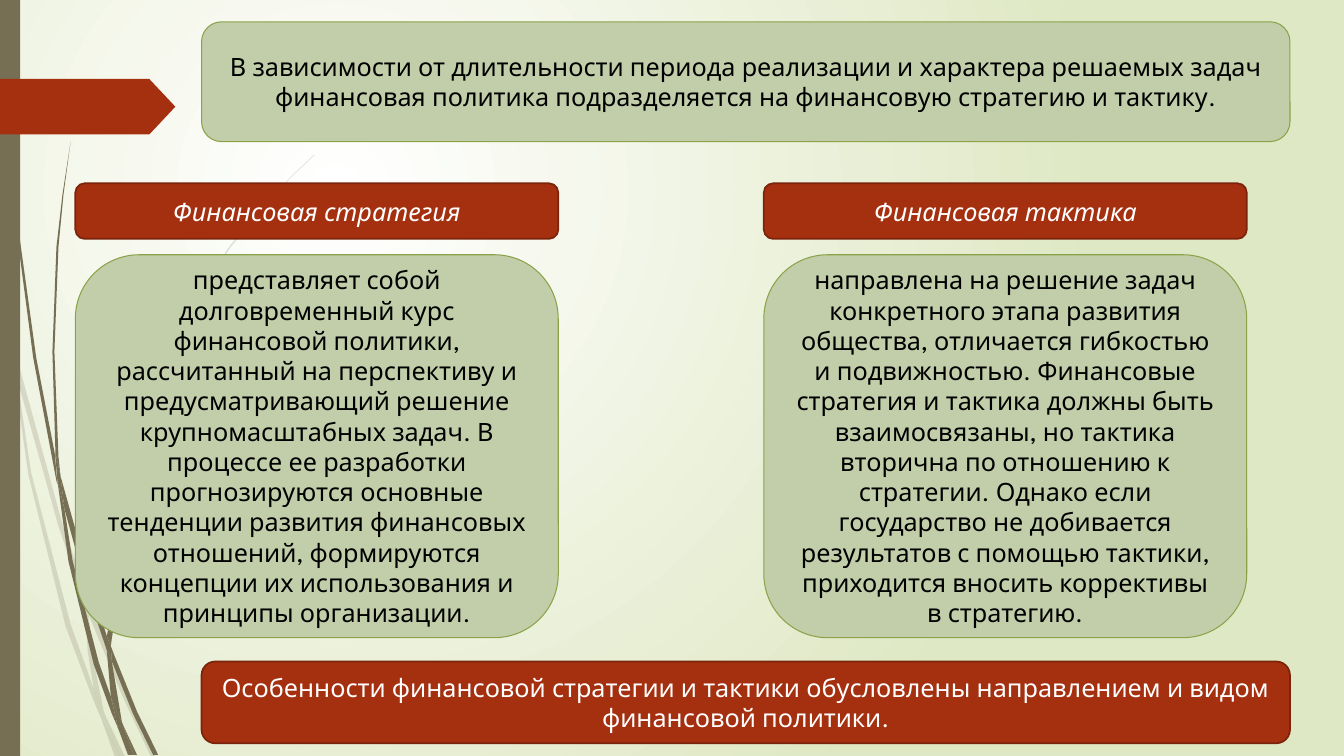
from lxml import etree
from pptx import Presentation
from pptx.dml.color import RGBColor
from pptx.enum.shapes import MSO_SHAPE
from pptx.enum.text import MSO_ANCHOR, PP_ALIGN
from pptx.oxml.ns import qn
from pptx.util import Cm, Pt

RECTANGLE = MSO_SHAPE.RECTANGLE
ROUNDED = MSO_SHAPE.ROUNDED_RECTANGLE
ARROW = MSO_SHAPE.PENTAGON
MIDDLE = MSO_ANCHOR.MIDDLE
CENTER = PP_ALIGN.CENTER

OLIVE = "766F54"
RED = "A53010"
GREEN = "C2CEA9"
GRASS_UNIT = Cm(0.0254)

PALE_GRASS = [
    [(11, 350), (9, 322), (0, 282), (0, 299), (10, 344)],
    [(58, 522), (84, 599), (85, 586), (62, 520), (14, 345), (17, 376)],
    [(92, 607), (88, 596), (88, 610), (123, 694), (150, 751), (155, 751), (127, 692)],
    [(119, 751), (124, 751), (105, 711)],
    [(93, 683), (70, 619), (31, 469), (17, 376), (11, 350), (28, 470), (65, 621),
     (92, 693), (101, 714), (99, 707)],
    [(84, 599), (87, 646), (93, 683), (96, 692), (105, 711), (103, 706), (91, 646),
     (88, 610), (88, 608)],
    [(88, 584), (110, 462), (160, 349), (229, 245), (268, 198), (290, 175), (312, 154),
     (312, 153), (289, 175), (268, 197), (228, 244), (158, 348), (107, 461), (85, 584),
     (85, 586), (88, 596)],
    [(101, 714), (114, 751), (119, 751)],
    [(96, 692), (93, 683), (99, 707), (101, 714), (119, 751), (105, 711)],
]
DARK_GRASS = [
    [(7, 110), (17, 233), (33, 355), (56, 477), (57, 481), (55, 457), (55, 453),
     (36, 355), (19, 232), (8, 109), (5, 48), (4, 0), (3, 0), (4, 48)],
    [(88, 592), (106, 645), (106, 633), (106, 631), (93, 590), (60, 472), (64, 505)],
    [(113, 649), (110, 641), (111, 656), (132, 708), (152, 749), (157, 749), (136, 706)],
    [(110, 691), (98, 657), (72, 556), (64, 505), (57, 477), (68, 557), (93, 659),
     (111, 708), (117, 722), (116, 717)],
    [(60, 472), (58, 453), (54, 349), (58, 245), (63, 193), (70, 141), (62, 193),
     (56, 245), (52, 349), (55, 449)],
    [(133, 749), (136, 749), (122, 719)],
    [(57, 477), (64, 505), (60, 472), (55, 449), (55, 453)],
    [(111, 633), (125, 552), (158, 476), (205, 406), (231, 374), (245, 359), (261, 344),
     (260, 344), (245, 358), (231, 373), (204, 405), (156, 474), (122, 551), (106, 631),
     (110, 641)],
    [(117, 722), (127, 749), (131, 749)],
    [(106, 645), (110, 691), (116, 706), (122, 719), (121, 716), (111, 656), (109, 651)],
    [(106, 645), (109, 651), (111, 656), (110, 641), (106, 631), (106, 633)],
    [(116, 706), (110, 691), (116, 717), (117, 722), (130, 749), (133, 749), (122, 719)],
]

OPENING = ("В зависимости от длительности периода реализации и характера решаемых задач "
           "финансовая политика подразделяется на финансовую стратегию и тактику.")
STRATEGY = ("представляет собой долговременный курс финансовой политики, рассчитанный на "
            "перспективу и предусматривающий решение крупномасштабных задач. В процессе ее "
            "разработки прогнозируются основные тенденции развития финансовых отношений, "
            "формируются концепции их использования и принципы организации.")
TACTICS = ("направлена на решение задач конкретного этапа развития общества, отличается "
           "гибкостью и подвижностью. Финансовые стратегия и тактика должны быть "
           "взаимосвязаны, но тактика вторична по отношению к стратегии. Однако если "
           "государство не добивается результатов с помощью тактики, приходится вносить "
           "коррективы в стратегию.")
CLOSING = ("Особенности финансовой стратегии и тактики обусловлены направлением и видом "
           "финансовой политики.")


def color(value):
    return RGBColor.from_string(value)


class PolicySlide:
    font = {"name": "League Spartan", "size": Pt(18)}
    looks = {
        GREEN: {"line": "8BA249", "width": 0.75, "text": "000000"},
        RED: {"line": "7A240C", "width": 1.25, "text": "FFFFFF"},
    }

    def __init__(self, presentation):
        self.slide = presentation.slides.add_slide(presentation.slide_layouts[6])
        self.shapes = self.slide.shapes

    def background(self, colors):
        fill = self.slide.background.fill
        fill.gradient()
        for stop, position, value in zip(fill.gradient_stops, (0, 1), colors):
            stop.position = position
            stop.color.rgb = color(value)
        linear = next(self.slide.element.iter(qn("a:lin")))
        circle = etree.Element(qn("a:path"), {"path": "circle"})
        etree.SubElement(circle, qn("a:fillToRect"),
                         {"l": "50000", "t": "50000", "r": "100000", "b": "100000"})
        linear.getparent().replace(linear, circle)

    def paint(self, shape, fill):
        shape.shadow.inherit = False
        shape.fill.solid()
        shape.fill.fore_color.rgb = color(fill)
        shape.line.fill.background()
        return shape

    def grass(self, blades, opacity=100):
        for start, *points in blades:
            builder = self.shapes.build_freeform(*start, scale=GRASS_UNIT)
            builder.add_line_segments(points, close=True)
            shape = self.paint(builder.convert_to_shape(), OLIVE)
            if opacity < 100:
                solid = next(shape.element.spPr.iter(qn("a:srgbClr")))
                etree.SubElement(solid, qn("a:alpha"), {"val": str(opacity * 1000)})

    def block(self, kind, bounds, fill):
        return self.paint(self.shapes.add_shape(kind, *map(Cm, bounds)), fill)

    def card(self, bounds, text, fill, italic=False):
        look = self.looks[fill]
        shape = self.block(ROUNDED, bounds, fill)
        shape.line.color.rgb = color(look["line"])
        shape.line.width = Pt(look["width"])
        frame = shape.text_frame
        frame.word_wrap = True
        frame.vertical_anchor = MIDDLE
        paragraph = frame.paragraphs[0]
        paragraph.alignment = CENTER
        run = paragraph.add_run()
        run.text = text
        for name, value in {**self.font, "italic": italic}.items():
            setattr(run.font, name, value)
        run.font.color.rgb = color(look["text"])


def main():
    presentation = Presentation()
    presentation.slide_width = Cm(33.87)
    presentation.slide_height = Cm(19.05)

    page = PolicySlide(presentation)
    page.background(("FFFFFF", "DFE8C4"))
    page.grass(PALE_GRASS, opacity=20)
    page.grass(DARK_GRASS)
    page.block(RECTANGLE, (0, 0, 0.51, 19.05), OLIVE)
    arrow = page.block(ARROW, (0, 1.99, 4.42, 1.4), RED)
    arrow.adjustments[0] = 0.47

    page.card((5.08, 0.55, 27.43, 3.02), OPENING, GREEN)
    columns = (
        (1.9, "Финансовая стратегия", STRATEGY),
        (19.25, "Финансовая тактика", TACTICS),
    )
    for left, heading, description in columns:
        page.card((left, 4.62, 12.17, 1.4), heading, RED, italic=True)
        page.card((left, 6.42, 12.17, 9.65), description, GREEN)
    page.card((5.08, 16.67, 27.43, 2.06), CLOSING, RED)

    presentation.save("out.pptx")


if __name__ == "__main__":
    main()
